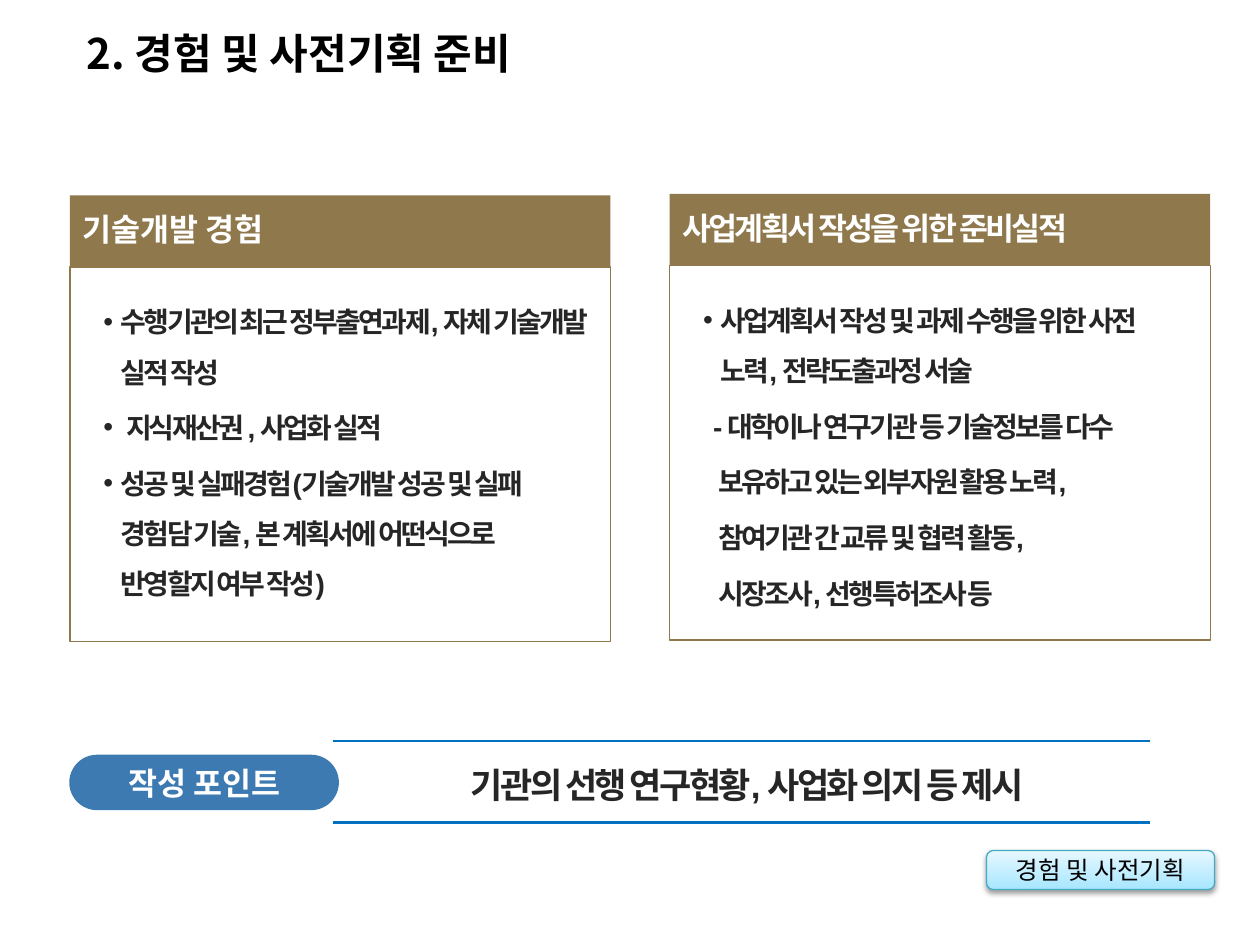
from dataclasses import dataclass

from lxml import etree
from pptx import Presentation
from pptx.dml.color import RGBColor
from pptx.enum.shapes import MSO_CONNECTOR, MSO_SHAPE
from pptx.enum.text import MSO_ANCHOR, MSO_AUTO_SIZE, PP_ALIGN
from pptx.oxml import parse_xml
from pptx.oxml.ns import nsdecls, qn
from pptx.util import Inches, Pt

STRAIGHT = MSO_CONNECTOR.STRAIGHT
RECTANGLE, ROUNDED = MSO_SHAPE.RECTANGLE, MSO_SHAPE.ROUNDED_RECTANGLE
TOP, MIDDLE = MSO_ANCHOR.TOP, MSO_ANCHOR.MIDDLE
LEFT, CENTER = PP_ALIGN.LEFT, PP_ALIGN.CENTER
NO_FIT = MSO_AUTO_SIZE.NONE
WIDTH, HEIGHT = Inches(10), Inches(7.5)


@dataclass(frozen=True)
class Theme:
    latin: str = "Arial"
    korean: str = "Noto Sans CJK KR"
    black: str = "000000"
    white: str = "FFFFFF"
    ink: str = "262626"
    bronze: str = "8E784C"
    rule: str = "0070C0"
    pill: str = "3D7AB1"
    tag_line: str = "46AAC5"
    tag_low: str = "A7E6FF"
    tag_high: str = "E7F8FF"
    title: int = 24
    point: int = 20
    heading: int = 18
    body: int = 16
    tag: int = 14
    tight: int = -150


THEME = Theme()

PANELS = [
    (5.55, 20.67, "기술개발 경험", 0, 40.4, [
        ("•", 0.14, "수행기관의 최근 정부출연과제, 자체 기술개발 실적 작성"),
        ("•", 0.18, "지식재산권 , 사업화 실적"),
        ("•", 0.14, "성공 및 실패경험(기술개발 성공 및 실패 경험담 기술, "
                    "본 계획서에 어떤식으로 반영할지 여부 작성)"),
    ]),
    (53.15, 20.53, "사업계획서 작성을 위한 준비실적", THEME.tight, 39.3, [
        ("•", 0.14, "사업계획서 작성 및 과제 수행을 위한 사전 노력, 전략도출과정 서술"),
        ("", 0.08, "- 대학이나 연구기관 등 기술정보를 다수"),
        ("", 0.12, "보유하고 있는 외부자원 활용 노력,"),
        ("", 0.12, "참여기관 간 교류 및 협력 활동,"),
        ("", 0.12, "시장조사, 선행특허조사 등"),
    ]),
]


def share(left, top, width, height):
    return (int(WIDTH * left / 100), int(HEIGHT * top / 100),
            int(WIDTH * width / 100), int(HEIGHT * height / 100))


def rgb(value):
    return RGBColor.from_string(value)


def soft_shadow(blur, distance, direction, opacity):
    return parse_xml(
        f'<a:outerShdw {nsdecls("a")} blurRad="{Pt(blur)}" dist="{Pt(distance)}" '
        f'dir="{direction * 60000}" algn="t" rotWithShape="0"><a:srgbClr val="{THEME.black}">'
        f'<a:alpha val="{opacity * 1000}"/></a:srgbClr></a:outerShdw>')


def add_run(paragraph, text, size, color, latin=THEME.latin, bold=True, spacing=0, shadow=False):
    run = paragraph.add_run()
    run.text = text
    font = run.font
    font.size, font.bold, font.name = Pt(size), bold, latin
    font.color.rgb = rgb(color)
    properties = run._r.get_or_add_rPr()
    if spacing:
        properties.set("spc", str(spacing))
    if shadow:
        effects = etree.Element(qn("a:effectLst"))
        effects.append(soft_shadow(4, 2, 45, 50))
        properties.find(qn("a:solidFill")).addnext(effects)
    etree.SubElement(properties, qn("a:ea")).set("typeface", THEME.korean)


def prepare(frame, anchor=MIDDLE, align=LEFT):
    frame.word_wrap = True
    frame.auto_size = NO_FIT
    frame.vertical_anchor = anchor
    frame.paragraphs[0].alignment = align
    return frame.paragraphs[0]


def place(element, bounds):
    element.left, element.top, element.width, element.height = share(*bounds)


def add_block(slide, kind, bounds, fill=None, line=None, weight=0.7):
    block = slide.shapes.add_shape(kind, *share(*bounds))
    block.shadow.inherit = False
    if fill:
        block.fill.solid()
        block.fill.fore_color.rgb = rgb(fill)
    else:
        block.fill.background()
    if line:
        block.line.color.rgb = rgb(line)
        block.line.width = Pt(weight)
    else:
        block.line.fill.background()
    return block


def set_bullet(paragraph, bullet, indent):
    properties = paragraph._p.get_or_add_pPr()
    properties.set("marL", str(Inches(indent)))
    properties.set("indent", str(-Inches(indent) if bullet else 0))
    if bullet:
        etree.SubElement(properties, qn("a:buFont")).set("typeface", THEME.latin)
        etree.SubElement(properties, qn("a:buChar")).set("char", bullet)
    else:
        etree.SubElement(properties, qn("a:buNone"))


def fill_list(body, bounds, items):
    place(body, bounds)
    frame = body.text_frame
    first = prepare(frame, TOP)
    for index, (bullet, indent, text) in enumerate(items):
        paragraph = frame.add_paragraph() if index else first
        set_bullet(paragraph, bullet, indent)
        paragraph.line_spacing = 1.5
        paragraph.space_before, paragraph.space_after = Pt(0), Pt(3)
        add_run(paragraph, text, THEME.body, THEME.ink, spacing=THEME.tight)


def add_panel(slide, body, left, top, heading, spacing, list_width, items):
    header = add_block(slide, RECTANGLE, (left, top, 42.9, 7.6), THEME.bronze)
    header.text_frame.margin_bottom = Inches(0.08)
    add_run(prepare(header.text_frame), heading, THEME.heading, THEME.white,
            spacing=spacing, shadow=True)
    add_block(slide, RECTANGLE, (left, top + 7.6, 42.9, 39.6), line=THEME.bronze)
    fill_list(body, (left + 1.65, top + 9.13, list_width, 35.3), items)


def add_rule(slide, height):
    left, top, width, _ = share(26.4, height, 64.9, 0)
    rule = slide.shapes.add_connector(STRAIGHT, left, top, left + width, top)
    rule.line.color.rgb = rgb(THEME.rule)
    rule.line.width = Pt(1.5)
    etree.SubElement(rule._element.spPr, qn("a:effectLst"))


def add_point(slide):
    for height in (78.4, 87.07):
        add_rule(slide, height)
    message = slide.shapes.add_textbox(*share(23.3, 80.13, 72, 5.87))
    add_run(prepare(message.text_frame, TOP, CENTER), "기관의 선행 연구현황, 사업화 의지 등 제시",
            THEME.point, THEME.ink, spacing=THEME.tight)
    pill = add_block(slide, ROUNDED, (5.5, 79.87, 21.4, 5.87), THEME.pill)
    pill.adjustments[0] = 0.5
    add_run(prepare(pill.text_frame, align=CENTER), "작성 포인트",
            THEME.heading, THEME.white, shadow=True)


def add_tag(slide):
    tag = add_block(slide, ROUNDED, (78.3, 90, 18.1, 4.13), line=THEME.tag_line, weight=0.75)
    tag.fill.gradient()
    tag.fill.gradient_angle = 90
    for stop, color in zip(tag.fill.gradient_stops, (THEME.tag_low, THEME.tag_high)):
        stop.color.rgb = rgb(color)
    tag._element.spPr.find(qn("a:effectLst")).append(soft_shadow(3.1, 1.6, 90, 38))
    add_run(prepare(tag.text_frame, align=CENTER), "경험 및 사전기획",
            THEME.tag, THEME.black, THEME.korean, bold=False)


def main():
    deck = Presentation()
    deck.slide_width, deck.slide_height = WIDTH, HEIGHT
    slide = deck.slides.add_slide(deck.slide_layouts[3])
    title, *bodies = slide.placeholders
    place(title, (5.9, 2.27, 39.3, 6.67))
    add_run(prepare(title.text_frame), "2. 경험 및 사전기획 준비",
            THEME.title, THEME.black, THEME.korean)
    for body, panel in zip(bodies, PANELS):
        add_panel(slide, body, *panel)
    add_point(slide)
    add_tag(slide)
    deck.save("out.pptx")


if __name__ == "__main__":
    main()
